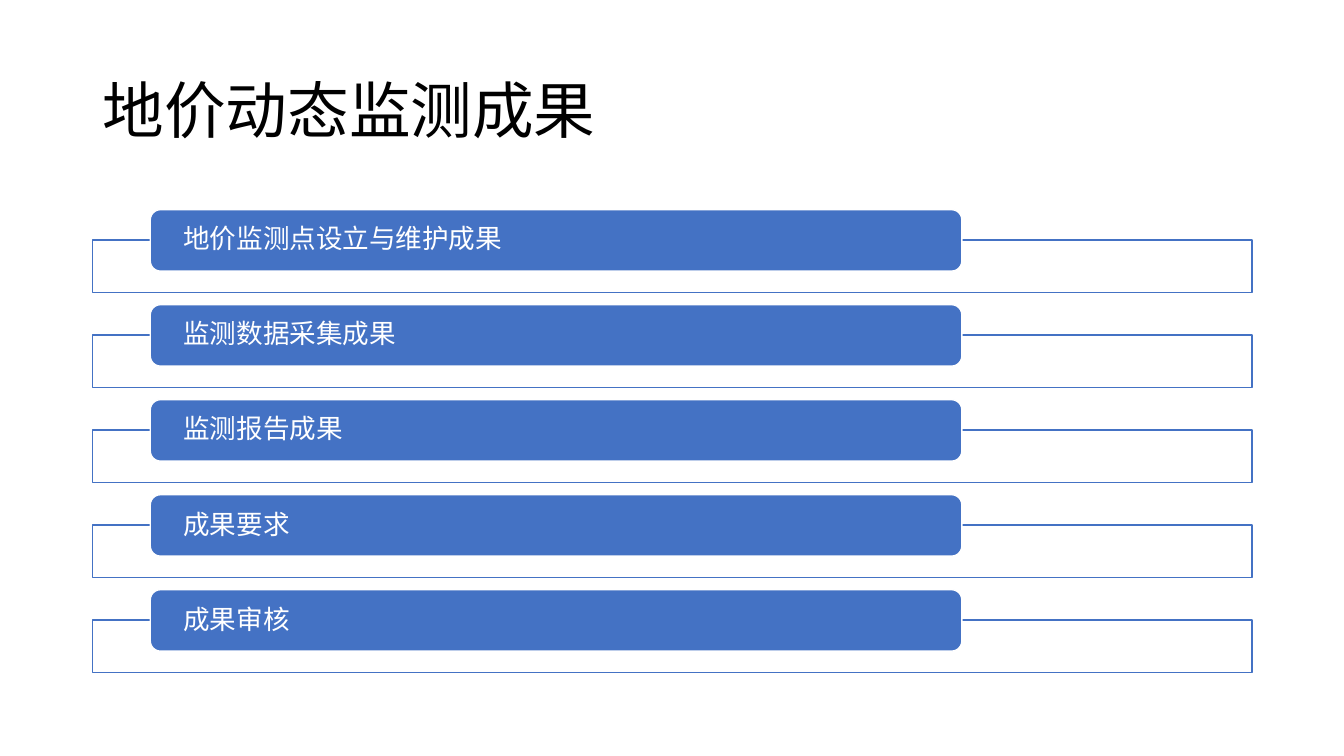
from dataclasses import dataclass

from lxml import etree
from pptx import Presentation
from pptx import util as u
from pptx.dml.color import RGBColor
from pptx.enum import shapes, text
from pptx.oxml import ns
from pptx.shapes.autoshape import Shape
from pptx.slide import Slide

COLORS = {"title": "000000", "accent": "4472C4", "paper": "FFFFFF"}
FONT = "Noto Sans CJK SC"
FRAME_TOP, BAR_TOP = 2.38, 2.08
STEP = 3.77 / 4
RESULTS = ["地价监测点设立与维护成果", "监测数据采集成果", "监测报告成果", "成果要求", "成果审核"]


@dataclass
class Area:
    left: float
    top: float
    width: float
    height: float

    def lengths(self) -> list[u.Length]:
        return [u.Inches(n) for n in (self.left, self.top, self.width, self.height)]


def write(box: Shape, words: str, size: float, color: str, margin: float, edge: float) -> None:
    """Put one left-aligned, vertically centred paragraph into the box."""
    frame = box.text_frame
    frame.word_wrap = True
    frame.vertical_anchor = text.MSO_ANCHOR.MIDDLE
    frame.margin_left = frame.margin_right = u.Inches(margin)
    frame.margin_top = frame.margin_bottom = u.Inches(edge)
    para = frame.paragraphs[0]
    para.text = words
    para.alignment = text.PP_ALIGN.LEFT
    para.line_spacing = 0.9
    font = para.font
    font.size = u.Pt(size)
    font.name = FONT
    font.color.rgb = RGBColor.from_string(COLORS[color])
    east_asian = etree.SubElement(para._p.pPr.find(ns.qn("a:defRPr")), ns.qn("a:ea"))
    east_asian.set("typeface", FONT)


def add_block(page: Slide, kind: shapes.MSO_SHAPE, area: Area, fill: str, line: str) -> Shape:
    block = page.shapes.add_shape(kind, *area.lengths())
    block.shadow.inherit = False
    block.fill.solid()
    block.fill.fore_color.rgb = RGBColor.from_string(COLORS[fill])
    block.line.color.rgb = RGBColor.from_string(COLORS[line])
    block.line.width = u.Pt(1)
    return block


def add_result(page: Slide, index: int, words: str) -> None:
    """Draw an outlined frame with a labelled bar across its top edge."""
    offset = index * STEP
    frame_area = Area(0.92, FRAME_TOP + offset, 11.5, 0.52)
    bar_area = Area(1.49, BAR_TOP + offset, 8.05, 0.61)
    frame = add_block(page, shapes.MSO_SHAPE.RECTANGLE, frame_area, "paper", "accent")
    color = frame.fill._xPr.find(ns.qn("a:solidFill"))[0]
    etree.SubElement(color, ns.qn("a:alpha")).set("val", "90000")
    bar = add_block(page, shapes.MSO_SHAPE.ROUNDED_RECTANGLE, bar_area, "accent", "paper")
    write(bar, words, 19, "paper", margin=0.3, edge=0)


def main() -> None:
    deck = Presentation()
    deck.slide_width, deck.slide_height = u.Inches(13.33), u.Inches(7.5)
    page = deck.slides.add_slide(deck.slide_layouts[6])
    title = page.shapes.add_textbox(*Area(0.92, 0.4, 11.5, 1.45).lengths())
    write(title, "地价动态监测成果", 44, "title", margin=0.1, edge=0.05)
    for index, words in enumerate(RESULTS):
        add_result(page, index, words)
    deck.save("out.pptx")


if __name__ == "__main__":
    main()
